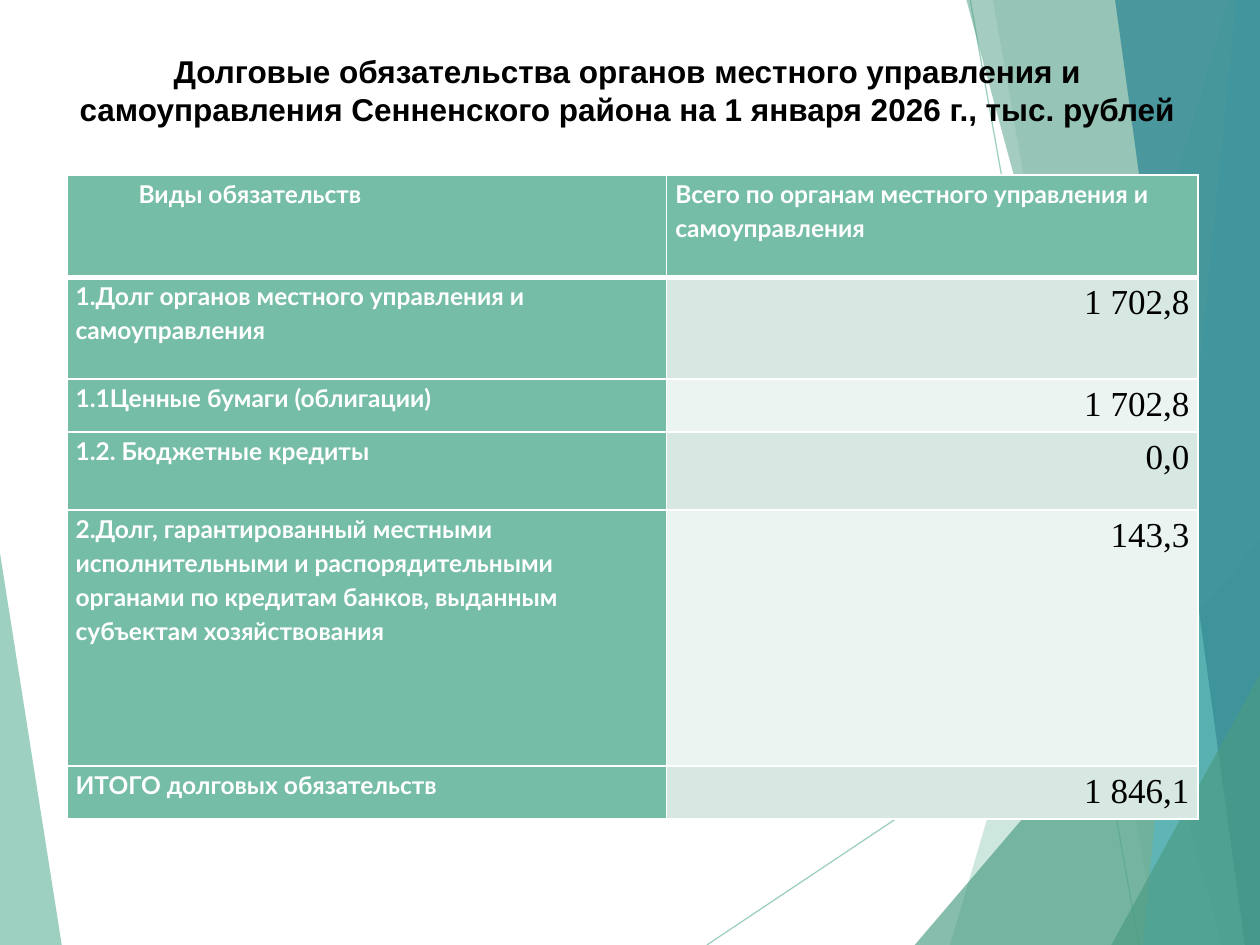
import pptx
import pptx.util
import pptx.dml.color
import pptx.enum.shapes
import pptx.enum.text
import pptx.oxml.ns
import lxml.etree

Inches, Pt = pptx.util.Inches, pptx.util.Pt
ALIGN = pptx.enum.text.PP_ALIGN
qn = pptx.oxml.ns.qn

COLORS = {
    "mint": "75BDA7", "green": "4A9B83", "aqua": "58B6C0", "teal": "3A8F98",
    "band": "D6E8E1", "pale": "ECF4F1", "white": "FFFFFF", "black": "000000",
}

# Facets: corner points, colour, opacity in percent
LEFT = ([(0, 4.39), (0.49, 7.5), (0, 7.5)], "mint", 70)
RIGHT = [
    ([(9.75, 0), (7.54, 7.5), (10, 7.5), (10, 0)], "mint", 36),
    ([(7.88, 0), (9.19, 7.5), (10, 7.5), (10, 0)], "mint", 20),
    ([(7.26, 7.5), (10, 4.29), (10, 7.5)], "green", 66),
    ([(7.67, 0), (9.7, 7.5), (10, 7.5), (10, 0)], "green", 50),
    ([(9.81, 0), (9.07, 7.5), (10, 7.5), (10, 0)], "aqua", 70),
    ([(8.85, 0), (9.88, 7.5), (10, 7.5), (10, 0)], "teal", 82),
    ([(8.82, 7.5), (10, 5.35), (10, 7.5)], "green", 66),
]
RAYS = [((5.61, 7.5), (10, 4.57)), ((7.7, 0), (9.04, 7.5))]

TITLE = ("Долговые обязательства органов местного управления и "
         "самоуправления Сенненского района на 1 января 2026 г., тыс. рублей")
ROWS = [
    ("Виды обязательств",
     "Всего по органам местного управления и самоуправления"),
    ("1.Долг органов местного управления и самоуправления", "1 702,8"),
    ("1.1Ценные бумаги (облигации)", "1 702,8"),
    ("1.2. Бюджетные кредиты", "0,0"),
    ("2.Долг, гарантированный местными исполнительными и распорядительными "
     "органами по кредитам банков, выданным субъектам хозяйствования", "143,3"),
    ("ИТОГО долговых обязательств", "1 846,1"),
]
WIDTHS = [4.76, 4.22]
HEIGHTS = [0.81, 0.81, 0.42, 0.62, 2.03, 0.42]


def rgb(name):
    return pptx.dml.color.RGBColor.from_string(COLORS[name])


def paint(fill, name, alpha=100):
    fill.solid()
    fill.fore_color.rgb = rgb(name)
    if alpha < 100:
        color = fill._xPr.find(qn("a:solidFill"))[0]
        lxml.etree.SubElement(color, qn("a:alpha"), val=str(alpha * 1000))


def style(para, font, size, color, bold):
    para.font.name = font
    para.font.size = Pt(size)
    para.font.bold = bold
    para.font.color.rgb = rgb(color)


def facet(slide, x, y, points, color, alpha):
    spots = [(Inches(x + px), Inches(y + py)) for px, py in points]
    pen = slide.shapes.build_freeform(*spots[0])
    pen.add_line_segments(spots[1:], close=True)
    shape = pen.convert_to_shape()
    shape.shadow.inherit = False
    shape.line.fill.background()
    paint(shape.fill, color, alpha)


def ray(slide, x, y, start, end):
    line = slide.shapes.add_connector(
        pptx.enum.shapes.MSO_CONNECTOR.STRAIGHT,
        Inches(x + start[0]), Inches(y + start[1]),
        Inches(x + end[0]), Inches(y + end[1]))
    line.line.width = Pt(0.75)
    paint(line.line.fill, "mint", 70)
    lxml.etree.SubElement(line._element.spPr, qn("a:effectLst"))


def backdrop(slide, x, y):
    facet(slide, x, y, *LEFT)
    for start, end in RAYS:
        ray(slide, x, y, start, end)
    for part in RIGHT:
        facet(slide, x, y, *part)


def border(cell, side, width):
    line = lxml.etree.SubElement(
        cell._tc.get_or_add_tcPr(), qn("a:ln" + side), w=str(Pt(width)))
    fill = lxml.etree.SubElement(line, qn("a:solidFill"))
    lxml.etree.SubElement(fill, qn("a:srgbClr"), val=COLORS["white"])


def fill_cell(cell, text, row, col):
    cell.margin_left = cell.margin_right = Inches(0.07)
    cell.margin_top = cell.margin_bottom = 0
    # The rule under the header is thicker
    thick = {(0, "B"), (1, "T")}
    for side in "LRTB":
        border(cell, side, 3 if (row, side) in thick else 1)
    label = row == 0 or col == 0
    paint(cell.fill, "mint" if label else "band" if row % 2 else "pale")
    cell.text = text
    para = cell.text_frame.paragraphs[0]
    para.line_spacing = 1.15
    if label:
        style(para, "Lato", 14, "white", True)
    else:
        para.alignment = ALIGN.RIGHT
        style(para, "Times New Roman", 20, "black", False)


def debts(slide, x, y, w, h):
    table = slide.shapes.add_table(
        len(ROWS), len(WIDTHS), Inches(x), Inches(y), Inches(w), Inches(h)).table
    table.horz_banding = False
    for col, width in zip(table.columns, WIDTHS):
        col.width = Inches(width)
    for r, texts in enumerate(ROWS):
        table.rows[r].height = Inches(HEIGHTS[r])
        for c, text in enumerate(texts):
            fill_cell(table.cell(r, c), text, r, c)
    # First heading is indented
    para = table.cell(0, 0).text_frame.paragraphs[0]
    para._p.get_or_add_pPr().set("marL", str(Inches(0.5)))


def heading(slide, x, y, w, h):
    box = slide.shapes.add_textbox(Inches(x), Inches(y), Inches(w), Inches(h))
    frame = box.text_frame
    frame.word_wrap = True
    frame.auto_size = pptx.enum.text.MSO_AUTO_SIZE.SHAPE_TO_FIT_TEXT
    frame.vertical_anchor = pptx.enum.text.MSO_ANCHOR.MIDDLE
    frame.text = TITLE
    para = frame.paragraphs[0]
    para.alignment = ALIGN.CENTER
    style(para, "Arial", 18, "black", True)


def main():
    deck = pptx.Presentation()
    deck.slide_width, deck.slide_height = Inches(10), Inches(7.5)
    slide = deck.slides.add_slide(deck.slide_layouts[6])
    backdrop(slide, 0, 0)
    debts(slide, 0.53, 1.39, sum(WIDTHS), sum(HEIGHTS))
    heading(slide, 0.45, 0.36, 9.06, 0.71)
    deck.save("out.pptx")


if __name__ == "__main__":
    main()
